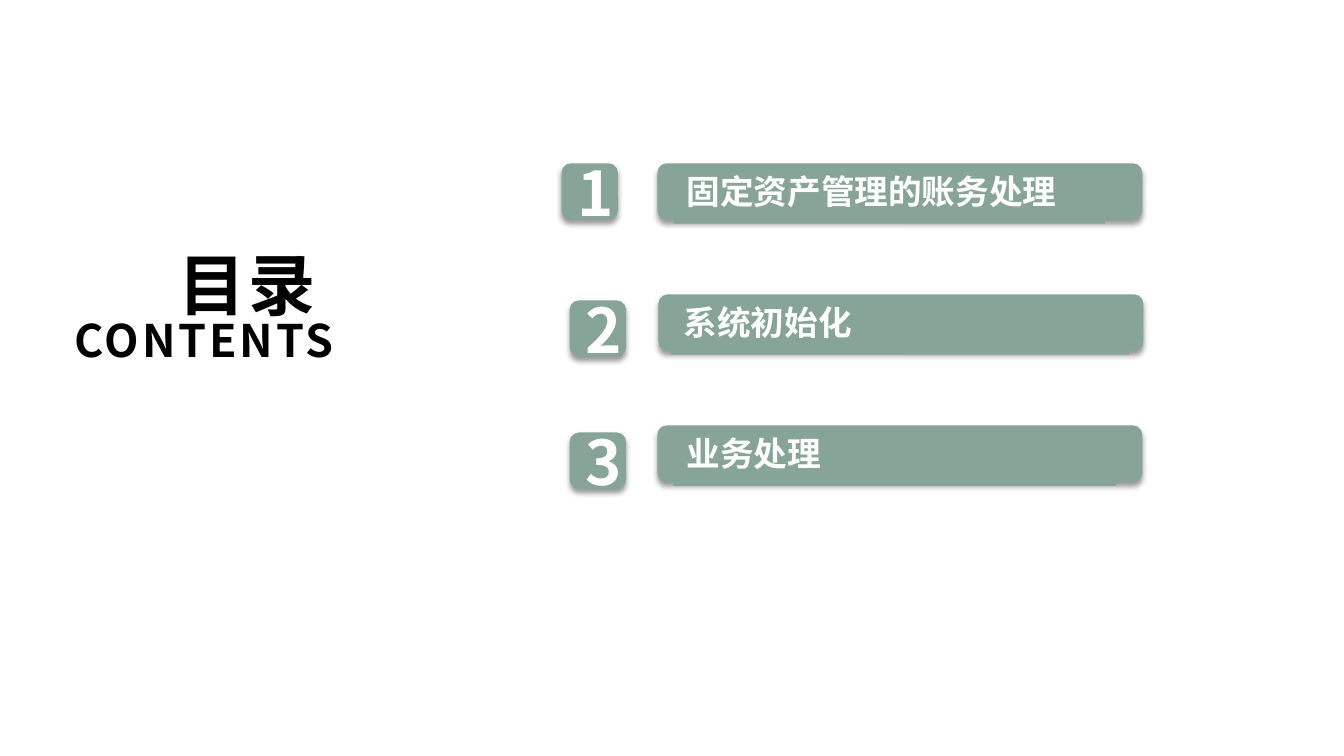
import pptx
import pptx.util
import pptx.dml.color
import pptx.enum.shapes
import pptx.enum.text
import pptx.oxml
import pptx.oxml.ns
import lxml.etree

Inches = pptx.util.Inches
Pt = pptx.util.Pt
RGBColor = pptx.dml.color.RGBColor
SHAPE = pptx.enum.shapes.MSO_SHAPE
ALIGN = pptx.enum.text.PP_ALIGN
ANCHOR = pptx.enum.text.MSO_ANCHOR
qn = pptx.oxml.ns.qn

SAGE = RGBColor(0x87, 0xA4, 0x98)
WHITE = RGBColor(0xFF, 0xFF, 0xFF)
BLACK = RGBColor(0x00, 0x00, 0x00)
FONT = "Noto Sans CJK SC"
SHADOW = (
    f'<a:effectLst {pptx.oxml.ns.nsdecls("a")}>'
    '<a:outerShdw blurRad="50800" dist="38100" dir="5400000" algn="t" rotWithShape="0">'
    '<a:srgbClr val="000000"><a:alpha val="40000"/></a:srgbClr>'
    '</a:outerShdw></a:effectLst>'
)


def add_block(shapes, kind, left, top, width, height, shadow=False):
    block = shapes.add_shape(kind, Inches(left), Inches(top), Inches(width), Inches(height))
    block.fill.solid()
    block.fill.fore_color.rgb = SAGE
    block.line.fill.background()
    block.shadow.inherit = False
    if shadow:
        effects = block._element.spPr.find(qn("a:effectLst"))
        block._element.spPr.replace(effects, pptx.oxml.parse_xml(SHADOW))
    return block


def format_text(shape, sizes, color, align, anchor, line_spacing):
    frame = shape.text_frame
    frame.word_wrap = True
    frame.auto_size = pptx.enum.text.MSO_AUTO_SIZE.NONE
    frame.vertical_anchor = anchor
    frame.margin_left = frame.margin_right = Inches(0.13)
    frame.margin_top = frame.margin_bottom = Inches(0.07)
    for para, size in zip(frame.paragraphs, sizes):
        para.alignment = align
        para.line_spacing = line_spacing
        for span in para.runs:
            span.font.name = FONT
            span.font.size = Pt(size)
            span.font.bold = True
            span.font.color.rgb = color
            east_asian = lxml.etree.SubElement(span.font._element, qn("a:ea"))
            east_asian.set("typeface", FONT)


deck = pptx.Presentation()
deck.slide_width = Inches(13.33)
deck.slide_height = Inches(7.5)
page = deck.slides.add_slide(deck.slide_layouts[5])

# Title
title = page.shapes.title
title.left, title.top = Inches(0.37), Inches(2.5)
title.width, title.height = Inches(3.07), Inches(1.48)
title.text_frame.text = "目录 \nCONTENTS"
format_text(title, (48, 32), BLACK, ALIGN.RIGHT, ANCHOR.TOP, 0.8)
for para in title.text_frame.paragraphs:
    for span in para.runs:
        span.font._element.set("spc", "200")

# Contents: number left and top, bar left, label left and width, label text
entries = [
    (5.57, 1.62, 6.52, 6.68, 4.28, "固定资产管理的账务处理"),
    (5.65, 2.98, 6.53, 6.65, 4.55, "系统初始化"),
    (5.65, 4.29, 6.52, 6.68, 4.39, "业务处理"),
]
for index, (number_left, number_top, bar_left, label_left, label_width, text) in enumerate(entries):
    bar_top = 1.62 + 1.3 * index

    # Number badge
    number = add_block(page.shapes, SHAPE.ROUNDED_RECTANGLE,
                       number_left, number_top, 0.56, 0.56, shadow=True)
    number.text_frame.text = str(index + 1)
    format_text(number, (44,), WHITE, ALIGN.CENTER, ANCHOR.MIDDLE, 1.0)

    # Bar with its label
    group = page.shapes.add_group_shape()
    add_block(group.shapes, SHAPE.ROUNDED_RECTANGLE, bar_left, bar_top, 4.81, 0.56, shadow=True)
    label = add_block(group.shapes, SHAPE.RECTANGLE, label_left, bar_top + 0.06, label_width, 0.54)
    label.text_frame.text = text
    format_text(label, (24,), WHITE, ALIGN.LEFT, ANCHOR.TOP, 0.88)

deck.save("out.pptx")
